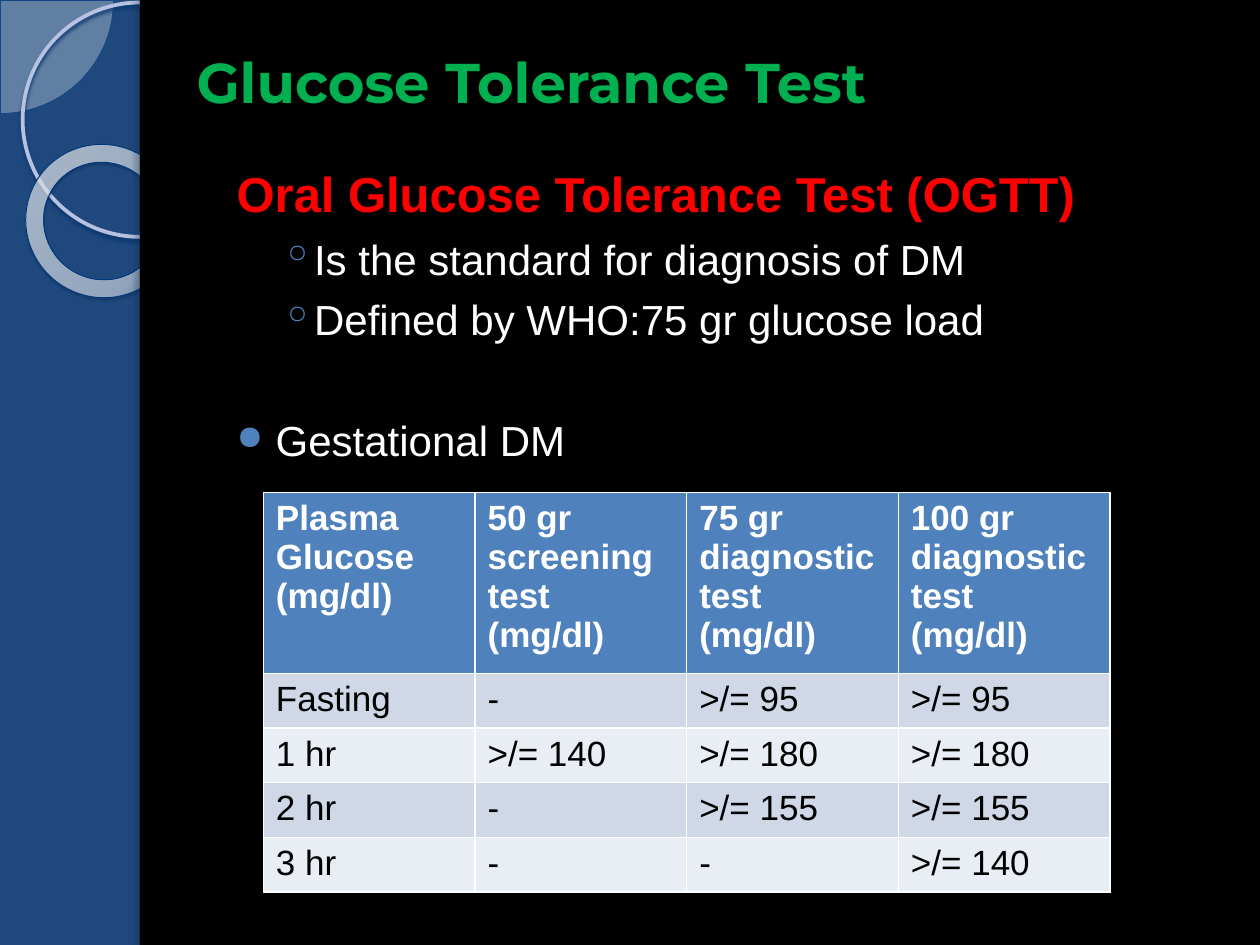
from lxml import etree
from pptx import Presentation, util as u
from pptx.dml.color import RGBColor
from pptx.enum import shapes, text
from pptx.oxml.ns import qn

W, H = 10, 7.5
PANEL = 1.11
BODY_FONT, TITLE_FONT = "Arial", "Montserrat"
C = dict(navy="1F497D", black="000000", white="FFFFFF", green="00B050",
         red="FF0000", blue="4F81BD", band="D0D8E8", pale="E9EDF4",
         mist="E8EAF1", edge="003C86", ring="B7C2E0", donut_edge="00387D")
TITLE = "Glucose Tolerance Test"

# kind: left margin, first-line indent, space before, size, colour, bold, bullet
STYLES = {
    "head": (0.65, -0.56, 6, 28, "red", True, None),
    "sub": (0.7, -0.26, 6, 24, "white", False, "◦"),
    "topic": (0.4, -0.31, 40, 24, "white", False, "●"),
}
BODY = [
    ("head", "Oral Glucose Tolerance Test (OGTT)"),
    ("sub", "Is the standard for diagnosis of DM"),
    ("sub", "Defined by WHO:75 gr glucose load"),
    ("topic", "Gestational DM"),
]
TABLE = [
    ["Plasma Glucose (mg/dl)", "50 gr screening test (mg/dl)",
     "75 gr diagnostic test (mg/dl)", "100 gr diagnostic test (mg/dl)"],
    ["Fasting", "-", ">/= 95", ">/= 95"],
    ["1 hr", ">/= 140", ">/= 180", ">/= 180"],
    ["2 hr", "-", ">/= 155", ">/= 155"],
    ["3 hr", "-", "-", ">/= 140"],
]
COL_W, HEAD_H, ROW_H = 1.68, 1.33, 0.41
DONUT_STOPS = [(0, "F0F2F8", 70), (70, "F6F8FB", 55), (100, "003E8A", 60)]


def rgb(name):
    return RGBColor.from_string(C[name])


def sub(parent, tag, **attrs):
    return etree.SubElement(parent, qn(tag), {k: str(v) for k, v in attrs.items()})


def add_colour(parent, hex_code, alpha):
    sub(sub(parent, "a:srgbClr", val=hex_code), "a:alpha", val=alpha * 1000)


def add_shape(kind, box, fill=None, line=None, shadow=None):
    """line is (colour, points); shadow is (hex, alpha, blur, distance, angle)."""
    sp = slide.shapes.add_shape(kind, *map(u.Inches, box))
    if fill:
        sp.fill.solid()
        sp.fill.fore_color.rgb = rgb(fill)
    else:
        sp.fill.background()
    if line:
        sp.line.color.rgb = rgb(line[0])
        sp.line.width = u.Pt(line[1])
    else:
        sp.line.fill.background()
    sp.shadow.inherit = False
    if shadow:
        code, alpha, blur, dist, angle = shadow
        effects = sp._element.spPr.find(qn("a:effectLst"))
        add_colour(sub(effects, "a:outerShdw", blurRad=u.Pt(blur), dist=u.Pt(dist),
                       dir=angle * 60000, algn="tl", rotWithShape=0), code, alpha)
    return sp


def set_radial_fill(sp, stops, **focus):
    grad = etree.Element(qn("a:gradFill"), rotWithShape="1")
    gs_list = sub(grad, "a:gsLst")
    for pos, code, alpha in stops:
        add_colour(sub(gs_list, "a:gs", pos=pos * 1000), code, alpha)
    rect = {side: share * 1000 for side, share in focus.items()}
    sub(sub(grad, "a:path", path="circle"), "a:fillToRect", **rect)
    spPr = sp._element.spPr
    spPr.replace(spPr.find(qn("a:noFill")), grad)


def add_run(p, words, size, colour, bold, font=BODY_FONT):
    r = p.add_run()
    r.text = words
    r.font.name, r.font.size, r.font.bold = font, u.Pt(size), bold
    r.font.color.rgb = rgb(colour)


def add_decoration():
    S = shapes.MSO_SHAPE
    pie = add_shape(S.PIE, (-0.89, -0.89, 1.79, 1.79), "mist", ("edge", 0.25))
    pie.adjustments[0], pie.adjustments[1] = 0, 54
    add_colour_alpha = pie._element.spPr.find(qn("a:solidFill"))[0]
    sub(add_colour_alpha, "a:alpha", val=33000)
    add_shape(S.OVAL, (0.18, 0.02, 1.86, 1.86), None, ("ring", 2.15),
              ("06346E", 85, 2, 2, 90))
    donut = add_shape(S.DONUT, (0.2, 1.15, 1.23, 1.21), None, ("donut_edge", 0.58),
                      ("001A39", 35, 1, 1.2, 75))
    donut.adjustments[0] = 0.118
    donut.rotation = 38.6
    set_radial_fill(donut, DONUT_STOPS, l=-408, t=-50, r=508, b=150)
    add_shape(S.RECTANGLE, (PANEL, 0, W - PANEL, H), "black")
    add_shape(S.RECTANGLE, (PANEL, 0, 0.08, H), "black",
              shadow=("0D2440", 25, 3, 3, 180))


def add_title():
    title = slide.shapes.title
    title._element.getparent().append(title._element)  # in front of the panel
    title.left, title.top, title.width, title.height = map(
        u.Inches, (1.46, 0.29, 8.2, 1.25))
    tf = title.text_frame
    tf.vertical_anchor = text.MSO_ANCHOR.MIDDLE
    tf.margin_bottom = u.Inches(0.59)
    p = tf.paragraphs[0]
    p.alignment = text.PP_ALIGN.LEFT
    add_run(p, TITLE, 32, "green", True, TITLE_FONT)


def add_body():
    box = slide.shapes.add_textbox(*map(u.Inches, (1.69, 1.25, 7.8, 5.83)))
    tf = box.text_frame
    tf.word_wrap = True
    for i, (kind, words) in enumerate(BODY):
        margin, indent, before, size, colour, bold, bullet = STYLES[kind]
        p = tf.add_paragraph() if i else tf.paragraphs[0]
        p.level = int(kind == "sub")
        p.space_before = u.Pt(before)
        pPr = p._p.get_or_add_pPr()
        pPr.set("marL", str(u.Inches(margin)))
        pPr.set("indent", str(u.Inches(indent)))
        if bullet:
            sub(sub(pPr, "a:buClr"), "a:srgbClr", val=C["blue"])
            if kind == "topic":
                sub(pPr, "a:buSzPct", val=80000)
            sub(pPr, "a:buChar", char=bullet)
        add_run(p, words, size, colour, bold)


def add_results():
    rows, cols = len(TABLE), len(TABLE[0])
    heights = [HEAD_H] + [ROW_H] * (rows - 1)
    table = slide.shapes.add_table(rows, cols, *map(
        u.Inches, (2.09, 3.91, cols * COL_W, sum(heights)))).table
    for col in table.columns:
        col.width = u.Inches(COL_W)
    for i, values in enumerate(TABLE):
        table.rows[i].height = u.Inches(heights[i])
        fill = "blue" if i == 0 else ("pale", "band")[i % 2]
        for j, value in enumerate(values):
            cell = table.cell(i, j)
            cell.fill.solid()
            cell.fill.fore_color.rgb = rgb(fill)
            add_run(cell.text_frame.paragraphs[0], value, 20,
                    "black" if i else "white", i == 0)


prs = Presentation()
prs.slide_width, prs.slide_height = u.Inches(W), u.Inches(H)
slide = prs.slides.add_slide(prs.slide_layouts[5])
slide.background.fill.solid()
slide.background.fill.fore_color.rgb = rgb("navy")
add_decoration()
add_title()
add_body()
add_results()
prs.save("out.pptx")
